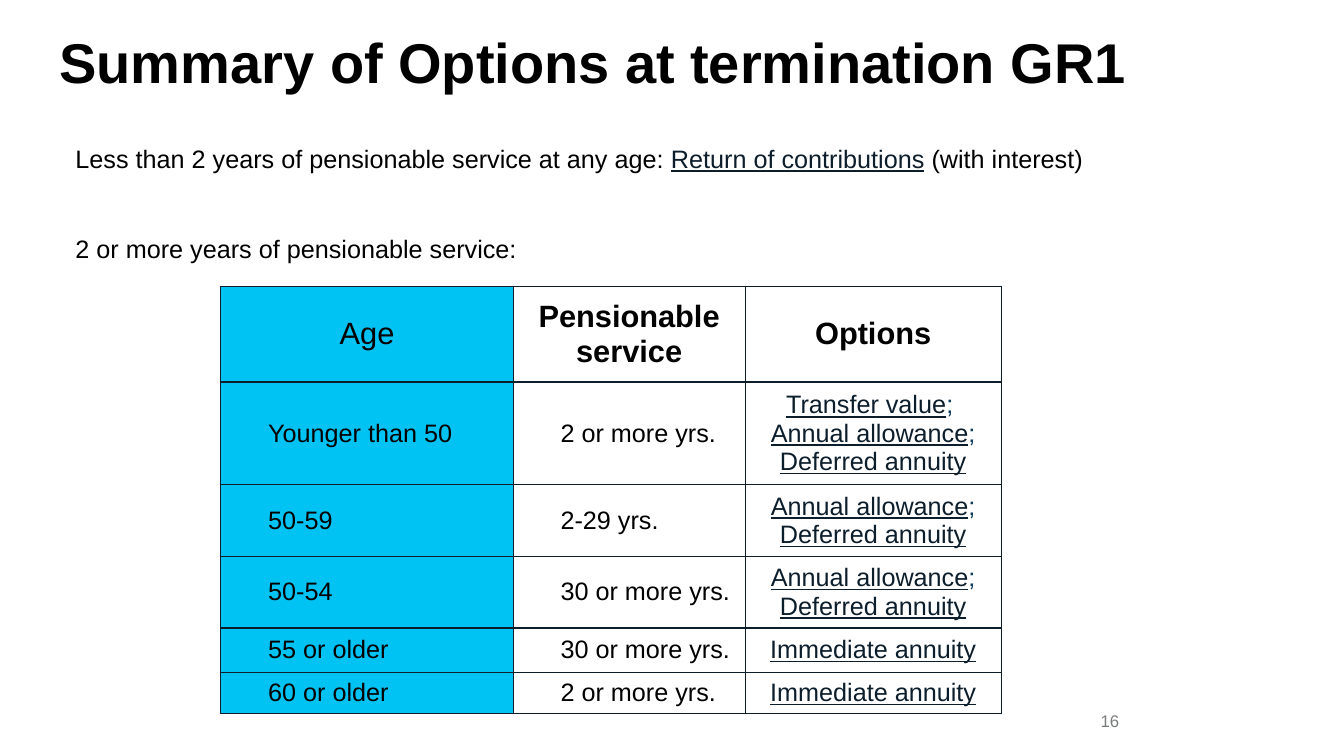
from lxml import etree
from pptx import Presentation
from pptx import util as u
from pptx.dml.color import RGBColor
from pptx.enum import text
from pptx.oxml.ns import qn

COLORS = {"black": "000000", "navy": "0C1E2B", "blue": "093B5C",
          "cyan": "00C2F3", "white": "FFFFFF", "gray": "797B7D"}
LEFT, CENTER, RIGHT = text.PP_ALIGN.LEFT, text.PP_ALIGN.CENTER, text.PP_ALIGN.RIGHT
MIDDLE = text.MSO_ANCHOR.MIDDLE
DEFERRED = ["_Annual allowance_; _Deferred annuity_"]
IMMEDIATE = ["_Immediate annuity_"]
HEADERS = ["Age", "Pensionable service", "Options"]
ROWS = [
    ("Younger than 50", "2 or more yrs.", ["_Transfer value_; "] + DEFERRED),
    ("50-59", "2-29 yrs.", DEFERRED),
    ("50-54", "30 or more yrs.", DEFERRED),
    ("55 or older", "30 or more yrs.", IMMEDIATE),
    ("60 or older", "2 or more yrs.", IMMEDIATE),
]
COLUMN_WIDTHS = [2.9, 2.3, 2.54]
ROW_HEIGHTS = [0.95, 1.02, 0.71, 0.71, 0.44, 0.41]


def assign(target, values):
    """Set each attribute of the target from a dict of values."""
    for name, value in values.items():
        setattr(target, name, value)


class SlideBuilder:
    """Holds the style and the current slide."""

    def __init__(self, presentation, font="Arial"):
        """Add a title-only slide."""
        self.font = font
        self.slide = presentation.slides.add_slide(presentation.slide_layouts[5])

    def add_text(self, paragraph, content, size, color="black", bold=False, align=LEFT):
        """Add text whose parts between underscores are underlined."""
        paragraph.alignment = align
        for index, part in enumerate(content.split("_")):
            if part:
                underlined = index % 2 == 1
                run = paragraph.add_run()
                run.text = part
                assign(run.font, {"name": self.font, "size": u.Pt(size),
                                  "bold": bold, "underline": underlined})
                shade = COLORS["navy" if underlined else color]
                run.font.color.rgb = RGBColor.from_string(shade)

    def title(self, content, box):
        """Fill and place the title placeholder."""
        shape = self.slide.shapes.title
        assign(shape, dict(zip(("left", "top", "width", "height"), map(u.Inches, box))))
        assign(shape.text_frame, {
            "margin_left": 0, "margin_right": 0, "margin_top": 0, "margin_bottom": 0,
            "word_wrap": True, "auto_size": text.MSO_AUTO_SIZE.NONE,
            "vertical_anchor": text.MSO_ANCHOR.TOP})
        paragraph = shape.text_frame.paragraphs[0]
        paragraph.line_spacing = 0.9
        self.add_text(paragraph, content, 40, bold=True)

    def label(self, content, box, size=18, color="black", align=LEFT,
              anchor=text.MSO_ANCHOR.TOP):
        """Add a one-paragraph text box."""
        frame = self.slide.shapes.add_textbox(*map(u.Inches, box)).text_frame
        assign(frame, {"word_wrap": True, "vertical_anchor": anchor})
        self.add_text(frame.paragraphs[0], content, size, color, align=align)

    def borders(self, cell):
        """Draw a thin line on all four sides of a cell."""
        properties = cell._tc.get_or_add_tcPr()
        for side in ("lnL", "lnR", "lnT", "lnB"):
            line = etree.SubElement(properties, qn("a:" + side), w=str(u.Pt(1)))
            fill = etree.SubElement(line, qn("a:solidFill"))
            etree.SubElement(fill, qn("a:srgbClr"), val=COLORS["navy"])

    def cell(self, cell, paragraphs, fill, margin=0.1, **style):
        """Format and fill one table cell."""
        self.borders(cell)
        cell.fill.solid()
        cell.fill.fore_color.rgb = RGBColor.from_string(COLORS[fill])
        assign(cell, {"vertical_anchor": MIDDLE, "margin_left": u.Inches(margin),
                      "margin_right": u.Inches(0.1), "margin_top": u.Inches(0.05),
                      "margin_bottom": u.Inches(0.05)})
        frame = cell.text_frame
        for index, content in enumerate(paragraphs):
            paragraph = frame.add_paragraph() if index else frame.paragraphs[0]
            self.add_text(paragraph, content, **style)

    def options_table(self, left, top):
        """Add the table of options by age and service."""
        table = self.slide.shapes.add_table(
            len(ROW_HEIGHTS), len(COLUMN_WIDTHS), u.Inches(left), u.Inches(top),
            u.Inches(sum(COLUMN_WIDTHS)), u.Inches(sum(ROW_HEIGHTS))).table
        for column, width in zip(table.columns, COLUMN_WIDTHS):
            column.width = u.Inches(width)
        for row, height in zip(table.rows, ROW_HEIGHTS):
            row.height = u.Inches(height)
        fills = ["cyan", "white", "white"]
        for index, header in enumerate(HEADERS):
            self.cell(table.cell(0, index), [header], fills[index],
                      size=22, bold=index > 0, align=CENTER)
        for number, (age, service, options) in enumerate(ROWS, 1):
            for index, content in enumerate((age, service)):
                self.cell(table.cell(number, index), [content], fills[index],
                          margin=0.47, size=18)
            self.cell(table.cell(number, 2), options, fills[2],
                      size=18, color="blue", align=CENTER)


def main():
    """Build and save the presentation."""
    presentation = Presentation()
    assign(presentation, {"slide_width": u.Inches(13.33), "slide_height": u.Inches(7.5)})
    builder = SlideBuilder(presentation)
    builder.title("Summary of Options at termination GR1", (0.59, 0.35, 10.82, 0.79))
    builder.label("Less than 2 years of pensionable service at any age: "
                  "_Return of contributions_ (with interest)", (0.65, 1.37, 10.69, 0.4))
    builder.label("2 or more years of pensionable service:", (0.65, 2.27, 9.97, 0.4))
    builder.options_table(2.19, 2.84)
    builder.label("16", (9.63, 6.95, 1.57, 0.4), size=12, color="gray",
                  align=RIGHT, anchor=MIDDLE)
    presentation.save("out.pptx")


if __name__ == "__main__":
    main()
